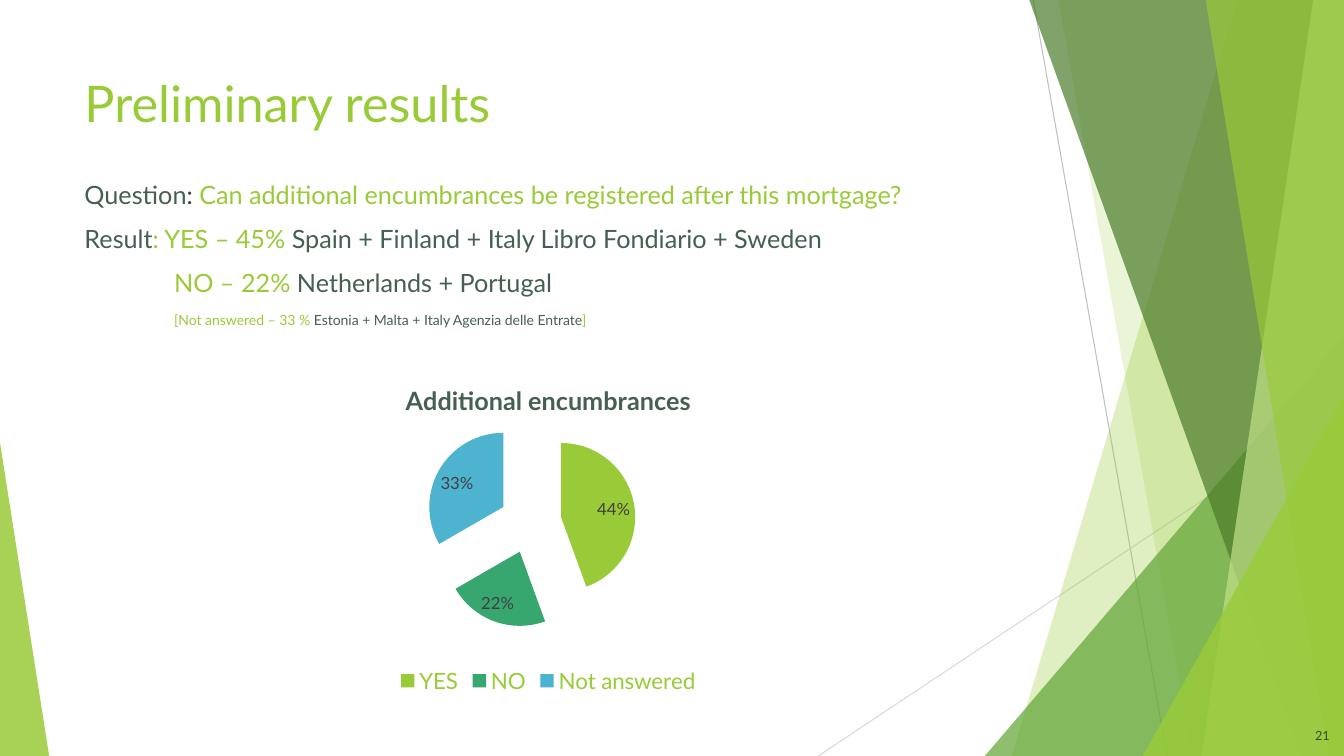
"""Builds the slide on preliminary results about additional encumbrances."""
from lxml import etree
from pptx import Presentation
from pptx.chart.data import CategoryChartData
from pptx.dml.color import RGBColor
from pptx.enum.chart import XL_CHART_TYPE as CHART, XL_LABEL_POSITION as LABEL
from pptx.enum.chart import XL_LEGEND_POSITION as LEGEND
from pptx.enum.shapes import MSO_CONNECTOR, MSO_SHAPE
from pptx.enum.text import MSO_ANCHOR, PP_ALIGN
from pptx.oxml.ns import qn
from pptx.util import Cm, Pt

FONT = "Lato"
LIME, SLATE, GREY = "99CB38", "455F51", "404040"
WIDTH, HEIGHT, TOP = 33.87, 19.05, -0.03

LINES = [
    ((26.04, 0), (29.41, HEIGHT), "BFBFBF"),
    ((WIDTH, 10.24), (20.62, HEIGHT), "D9D9D9"),
]
# Bands give top x and bottom x; triangles give left, top, width and apex.
DECOR = [
    ("band", (31.19, 25.5), LIME, 30),
    ("band", (26.67, 30.05), LIME, 20),
    ("triangle", (24.82, 8.46, 9.05, 1), "63A537", 72),
    ("band", (25.93, 32.79), "4A7C29", 70),
    ("band", (33.1, 30.28), "C2E088", 70),
    ("band", (30.38, 33.48), LIME, 65),
    ("triangle", (28.8, 9.98, 5.07, 1), LIME, 80),
    ("triangle", (0, 11.15, 1.24, 0), LIME, 85),
]
TITLE = [(0, 36, [("Preliminary results", LIME)])]
BODY = [
    (0, 18, [("Question", SLATE), (": ", GREY),
             ("Can additional encumbrances be registered after this mortgage?", LIME)]),
    (0, 18, [("Result", SLATE), (": YES – 45% ", LIME),
             ("Spain + Finland + Italy Libro Fondiario + Sweden", SLATE)]),
    (2.26, 18, [("NO – 22% ", LIME), ("Netherlands + Portugal", SLATE)]),
    (2.26, 10, [("[Not answered – 33 % ", LIME),
                ("Estonia + Malta + Italy Agenzia delle Entrate", SLATE), ("]", LIME)]),
]
NUMBER = [(0, 9, [("21", "31521C")])]
CHART_TITLE = "Additional encumbrances"
SLICES = [("YES", 44, LIME, 4), ("NO", 22, "37A76F", 20), ("Not answered", 33, "4EB3CF", 5)]


def paint(color, hex_value):
    color.rgb = RGBColor.from_string(hex_value)


def style(font, size, color, bold=False):
    font.name, font.size, font.bold = FONT, Pt(size), bold
    paint(font.color, color)


def add_line(slide, start, end, color):
    s = slide.shapes.add_connector(MSO_CONNECTOR.STRAIGHT, *map(Cm, start + end))
    s.line.width = Pt(0.75)
    paint(s.line.color, color)
    etree.SubElement(s._element.spPr, qn("a:effectLst"))


def add_decor(slide, kind, place, color, opacity):
    if kind == "band":
        top_x, bottom_x = place
        corners = [(WIDTH, TOP), (WIDTH, HEIGHT), (bottom_x, HEIGHT)]
        builder = slide.shapes.build_freeform(Cm(top_x), Cm(TOP))
        builder.add_line_segments([(Cm(x), Cm(y)) for x, y in corners])
        s = builder.convert_to_shape()
    else:
        left, top, width, apex = place
        s = slide.shapes.add_shape(MSO_SHAPE.ISOSCELES_TRIANGLE, Cm(left), Cm(top),
                                   Cm(width), Cm(HEIGHT - top))
        s.adjustments[0] = apex
    s.shadow.inherit = False
    s.fill.solid()
    paint(s.fill.fore_color, color)
    s.line.fill.background()
    rgb = s._element.spPr.find(".//" + qn("a:srgbClr"))
    etree.SubElement(rgb, qn("a:alpha"), val=str(opacity * 1000))


def add_text(slide, box, paragraphs, align=PP_ALIGN.LEFT, anchor=MSO_ANCHOR.TOP):
    tf = slide.shapes.add_textbox(*map(Cm, box)).text_frame
    tf.word_wrap = True
    tf.vertical_anchor = anchor
    for i, (indent, size, runs) in enumerate(paragraphs):
        p = tf.add_paragraph() if i else tf.paragraphs[0]
        p.alignment = align
        p.space_before = Pt(10 if i else 0)
        if indent:
            p._p.get_or_add_pPr().set("indent", str(Cm(indent)))
        for text, color in runs:
            r = p.add_run()
            r.text = text
            style(r.font, size, color)


def set_layout(parent, index, **values):
    layout = parent.find(qn("c:layout"))
    if layout is None:
        layout = etree.Element(qn("c:layout"))
        parent.insert(index, layout)
    manual = etree.SubElement(layout, qn("c:manualLayout"))
    for tag, value in values.items():
        etree.SubElement(manual, qn("c:" + tag), val=str(value))


def add_explosion(parent, percent):
    explosion = etree.Element(qn("c:explosion"), val=str(percent))
    parent.find(qn("c:spPr")).addprevious(explosion)


def add_pie(slide, box):
    data = CategoryChartData()
    data.categories = [name for name, *_ in SLICES]
    data.add_series("Series 1", [value for _, value, *_ in SLICES])
    chart = slide.shapes.add_chart(CHART.PIE, *map(Cm, box), data).chart
    style(chart.font, 10, "000000")

    chart.has_title = True
    tf = chart.chart_title.text_frame
    tf.text = CHART_TITLE
    style(tf.paragraphs[0].runs[0].font, 18, SLATE, bold=True)
    set_layout(chart.chart_title._element, 1, xMode="edge", yMode="edge", x=0.33, y=0.09)

    chart.has_legend = True
    chart.legend.position = LEGEND.BOTTOM
    chart.legend.include_in_layout = False
    style(chart.legend.font, 16, LIME)

    plot = chart.plots[0]
    plot.vary_by_categories = True
    set_layout(plot._element.getparent(), 0, layoutTarget="inner", xMode="edge",
               yMode="edge", x=0.004, y=0.203, w=0.951, h=0.597)
    series = plot.series[0]
    series.format.line.fill.background()
    series._element.find(qn("c:spPr")).addnext(etree.Element(qn("c:explosion"), val="42"))
    for i, (_, _, color, percent) in enumerate(SLICES):
        point = series.points[i]
        point.format.fill.solid()
        paint(point.format.fill.fore_color, color)
        point.format.line.fill.background()
        add_explosion(point._element if hasattr(point, "_element") else
                      series._element.findall(qn("c:dPt"))[i], percent)

    labels = series.data_labels
    labels.show_value = False
    labels.show_percentage = True
    labels.number_format, labels.number_format_is_linked = "0%", False
    labels.position = LABEL.BEST_FIT
    style(labels.font, 12, GREY)


def main():
    prs = Presentation()
    prs.slide_width, prs.slide_height = Cm(WIDTH), Cm(HEIGHT)
    slide = prs.slides.add_slide(prs.slide_layouts[6])
    for line in LINES:
        add_line(slide, *line)
    for part in DECOR:
        add_decor(slide, *part)
    add_text(slide, (1.88, 1.7, 23.88, 1.91), TITLE)
    add_text(slide, (1.88, 4.39, 24.74, 12.4), BODY)
    add_text(slide, (31.85, 18.03, 1.91, 1.02), NUMBER, PP_ALIGN.RIGHT, MSO_ANCHOR.MIDDLE)
    add_pie(slide, (2.92, 8.71, 21.79, 8.89))
    prs.save("out.pptx")


if __name__ == "__main__":
    main()
